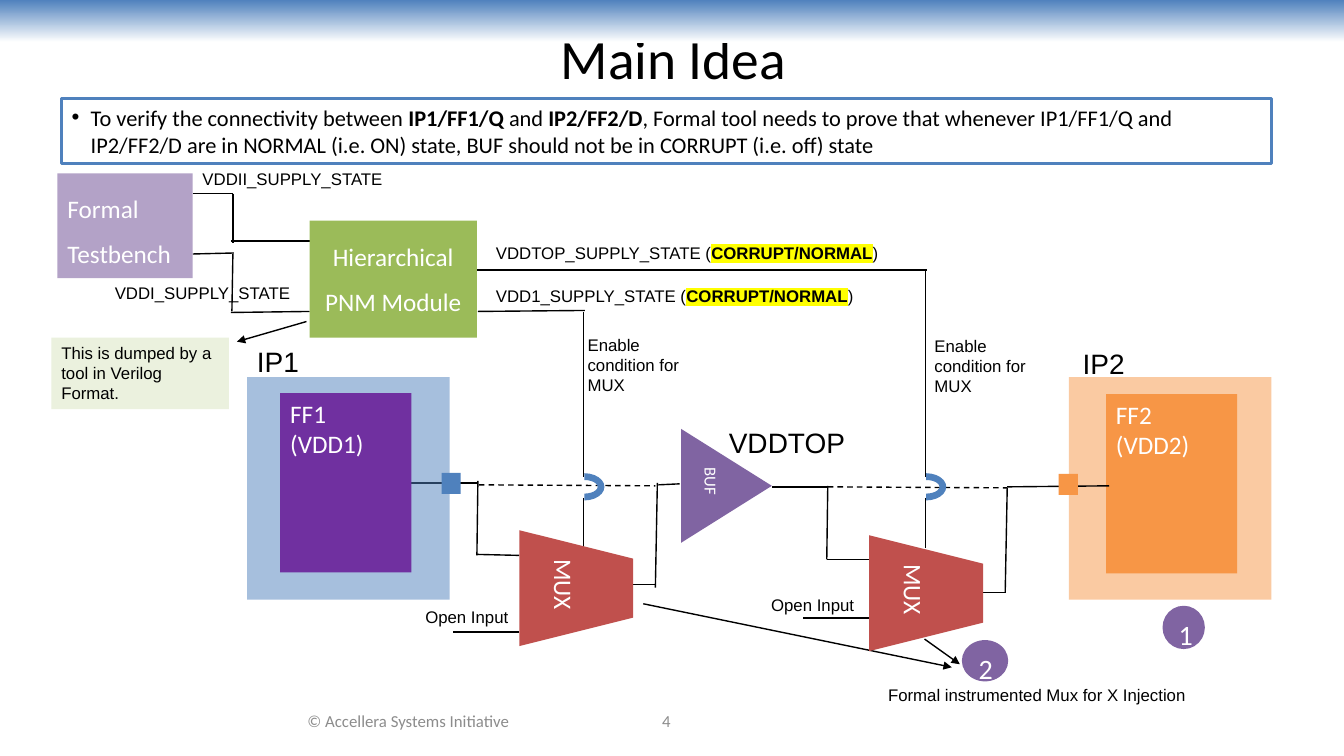
from pptx import Presentation
from pptx import util as u
from pptx.dml.color import RGBColor
from pptx.enum import dml, shapes, text
from pptx.oxml import ns, xmlchemy as xc

SCALE = 9144  # EMU in one px, 100 px to the inch

THEME = {
    "black": "000000", "white": "FFFFFF", "grey": "8C8C8C", "mark": "FFFF00",
    "blue": "4F81BD", "violet": "7030A0", "orange": "F79646", "purple": "8064A2",
    "red": "C0504D", "green": "9BBB59", "lilac": "B3A2C7", "pale": "EBF1DE",
    "title": 39.6, "big": 20, "block": 18, "body": 16, "small": 12,
    "head": "Calibri", "plain": "Arial",
}
KIND = shapes.MSO_SHAPE
MID = text.PP_ALIGN.CENTER
LEFT = text.PP_ALIGN.LEFT


def tint(name):
    return RGBColor.from_string(THEME[name])


def write(frame, words, size, face="plain", ink="black", align=LEFT, gap=1, mark=False):
    """Fill a frame; each newline starts a paragraph, words between asterisks are bold."""
    frame.word_wrap = True
    frame.auto_size = text.MSO_AUTO_SIZE.NONE
    frame.vertical_anchor = text.MSO_ANCHOR.TOP
    frame.text = words.replace("*", "")
    for para, line in zip(frame.paragraphs, words.split("\n")):
        para.alignment = align
        para.space_before = u.Pt(0)
        para.line_spacing = gap
        parts = line.split("*")
        para.runs[0].text = parts[0]
        for part in parts[1:]:
            para.add_run().text = part
        for i, run in enumerate(para.runs):
            run.font.size = u.Pt(THEME[size])
            run.font.name = THEME[face]
            run.font.bold = i % 2 == 1
            run.font.color.rgb = tint(ink)
            if mark and i % 2:
                glow = xc.OxmlElement("a:highlight")
                xc_color = xc.OxmlElement("a:srgbClr")
                xc_color.set("val", THEME["mark"])
                glow.append(xc_color)
                run.font._element.find(ns.qn("a:solidFill")).addnext(glow)


def draw(kind, at, fill, words="", size="block", turn=0, clear=False, **style):
    """Add a flat shape, half transparent when clear, with white text by default."""
    form = slide.shapes.add_shape(kind, *[n * SCALE for n in at])
    form.shadow.inherit = False
    form.rotation = turn
    form.line.fill.background()
    form.fill.solid()
    form.fill.fore_color.rgb = tint(fill)
    if clear:
        alpha = xc.OxmlElement("a:alpha")
        alpha.set("val", "50000")
        form._element.spPr.find(".//" + ns.qn("a:srgbClr")).append(alpha)
    if words:
        write(form.text_frame, words, size, **{"face": "head", "ink": "white", **style})
    return form


deck = Presentation()
deck.slide_width = 1333 * SCALE
deck.slide_height = 750 * SCALE
slide = deck.slides.add_slide(deck.slide_layouts[1])
title, body = slide.placeholders

# Header band, title and statement
band = draw(KIND.RECTANGLE, (0, 0, 1333, 42), "blue")
band.fill.gradient()
band.fill.gradient_angle = 270
for stop, spot, name in zip(band.fill.gradient_stops, (0, 1), ("blue", "white")):
    stop.position = spot
    stop.color.rgb = tint(name)

for hold, at in ((title, (68, 15, 1200, 83)), (body, (61, 98, 1200, 64))):
    hold.left, hold.top, hold.width, hold.height = [n * SCALE for n in at]
write(title.text_frame, "Main Idea", "title", "head", align=MID)
title.text_frame.vertical_anchor = text.MSO_ANCHOR.MIDDLE
write(body.text_frame,
      "To verify the connectivity between *IP1/FF1/Q *and *IP2/FF2/D*, Formal tool needs to "
      "prove that whenever IP1/FF1/Q and IP2/FF2/D are in NORMAL (i.e. ON) state, BUF should "
      "not be in CORRUPT (i.e. off) state", "body", "head")
indent = body.text_frame.paragraphs[0]._p.get_or_add_pPr()
indent.set("marL", str(19 * SCALE))
indent.set("indent", str(-19 * SCALE))
body.line.color.rgb = tint("blue")
body.line.width = u.Pt(2)

# Target block lies under the wires
draw(KIND.RECTANGLE, (1060, 374, 201, 221), "orange", clear=True)
draw(KIND.RECTANGLE, (1097, 391, 130, 178), "orange", "FF2\n(VDD2)")

# Wires: x1, y1, x2, y2
solid = [
    (408, 479, 474, 479),
    (766, 483, 821, 483), (999, 483, 1100, 482), (653, 481, 674, 480),
    (474, 477, 473, 551), (473, 550, 515, 551), (515, 627, 449, 627),
    (627, 580, 650, 580), (652, 479, 650, 583),
    (821, 482, 820, 555), (820, 555, 862, 555), (862, 613, 796, 613),
    (974, 588, 998, 588), (999, 484, 997, 588),
    (579, 310, 579, 473), (579, 494, 579, 544),
    (918, 267, 918, 473), (918, 494, 918, 544),
    (459, 268, 919, 268), (474, 309, 580, 308),
    (191, 192, 231, 192), (231, 192, 231, 241), (229, 239, 307, 239),
    (191, 252, 232, 251), (231, 252, 230, 309), (229, 310, 307, 309),
]
dashed = [(475, 481, 650, 482), (821, 483, 999, 484)]
arrows = [(917, 634, 952, 659), (638, 599, 944, 662), (304, 319, 235, 339)]
wires = []
for ends in solid + dashed + arrows:
    wire = slide.shapes.add_connector(shapes.MSO_CONNECTOR.STRAIGHT, *[n * SCALE for n in ends])
    wire.line.color.rgb = tint("black")
    wire.line.width = u.Pt(1)
    if ends in dashed:
        wire.line.dash_style = dml.MSO_LINE.DASH
    if ends in arrows:
        tip = xc.OxmlElement("a:tailEnd")
        tip.set("type", "triangle")
        wire.line._get_or_add_ln().append(tip)
    wire._element.spPr.append(xc.OxmlElement("a:effectLst"))
    wires.append(wire)

# Source block, ports, buffer and muxes
draw(KIND.RECTANGLE, (438, 469, 19, 21), "blue")
draw(KIND.RECTANGLE, (1050, 470, 19, 21), "orange")
draw(KIND.RECTANGLE, (245, 374, 201, 221), "blue", clear=True)
source = draw(KIND.RECTANGLE, (278, 390, 130, 178), "violet", "FF1\n(VDD1)")
wires[0].begin_connect(source, 3)
draw(KIND.ISOSCELES_TRIANGLE, (664, 437, 113, 90), "purple", "BUF", "small", 90)
for x, y in ((514, 527), (861, 532)):
    mux = draw(KIND.TRAPEZOID, (x, y, 115, 113), "red", "MUX", turn=90)
    mux.text_frame.margin_top = 35 * SCALE
for x in (566, 905):
    draw(KIND.BLOCK_ARC, (x, 463, 27, 40), "blue", turn=90)

# Driver blocks, note and step marks
draw(KIND.RECTANGLE, (57, 172, 134, 104), "lilac", "Formal Testbench", gap=1.5)
draw(KIND.RECTANGLE, (307, 219, 166, 116), "green", "Hierarchical PNM Module",
     align=MID, gap=1.5)
draw(KIND.RECTANGLE, (51, 335, 176, 71), "pale", "This is dumped by a tool in Verilog Format.",
     "small", face="plain", ink="black")
draw(KIND.OVAL, (1153, 601, 42, 43), "purple", "1", "big", align=MID)
draw(KIND.OVAL, (954, 635, 46, 41), "purple", "2", "big")

# Labels
labels = [
    ((713, 417, 172, 44), "VDDTOP", "big"),
    ((245, 337, 109, 44), "IP1", "big"),
    ((1064, 339, 96, 44), "IP2", "big"),
    ((191, 162, 257, 30), "VDDII_SUPPLY_STATE", "small"),
    ((104, 276, 334, 30), "VDDI_SUPPLY_STATE", "small"),
    ((482, 236, 603, 30), "VDDTOP_SUPPLY_STATE (*CORRUPT/NORMAL*)", "small"),
    ((482, 279, 407, 30), "VDD1_SUPPLY_STATE (*CORRUPT/NORMAL*)", "small"),
    ((573, 327, 134, 46), "Enable condition for MUX", "small"),
    ((917, 328, 134, 46), "Enable condition for MUX", "small"),
    ((412, 597, 117, 27), "Open Input", "small"),
    ((755, 585, 117, 27), "Open Input", "small"),
    ((871, 674, 356, 30), "Formal instrumented Mux for X Injection", "small"),
]
for at, words, size in labels:
    label = slide.shapes.add_textbox(*[n * SCALE for n in at])
    write(label.text_frame, words, size, mark=True)

# Footer
for at, words in (((244, 695, 322, 40), "© Accellera Systems Initiative"),
                  ((533, 695, 256, 40), "4")):
    foot = slide.shapes.add_textbox(*[n * SCALE for n in at])
    write(foot.text_frame, words, "small", "head", "grey", MID)
    foot.text_frame.vertical_anchor = text.MSO_ANCHOR.MIDDLE

deck.save("out.pptx")
